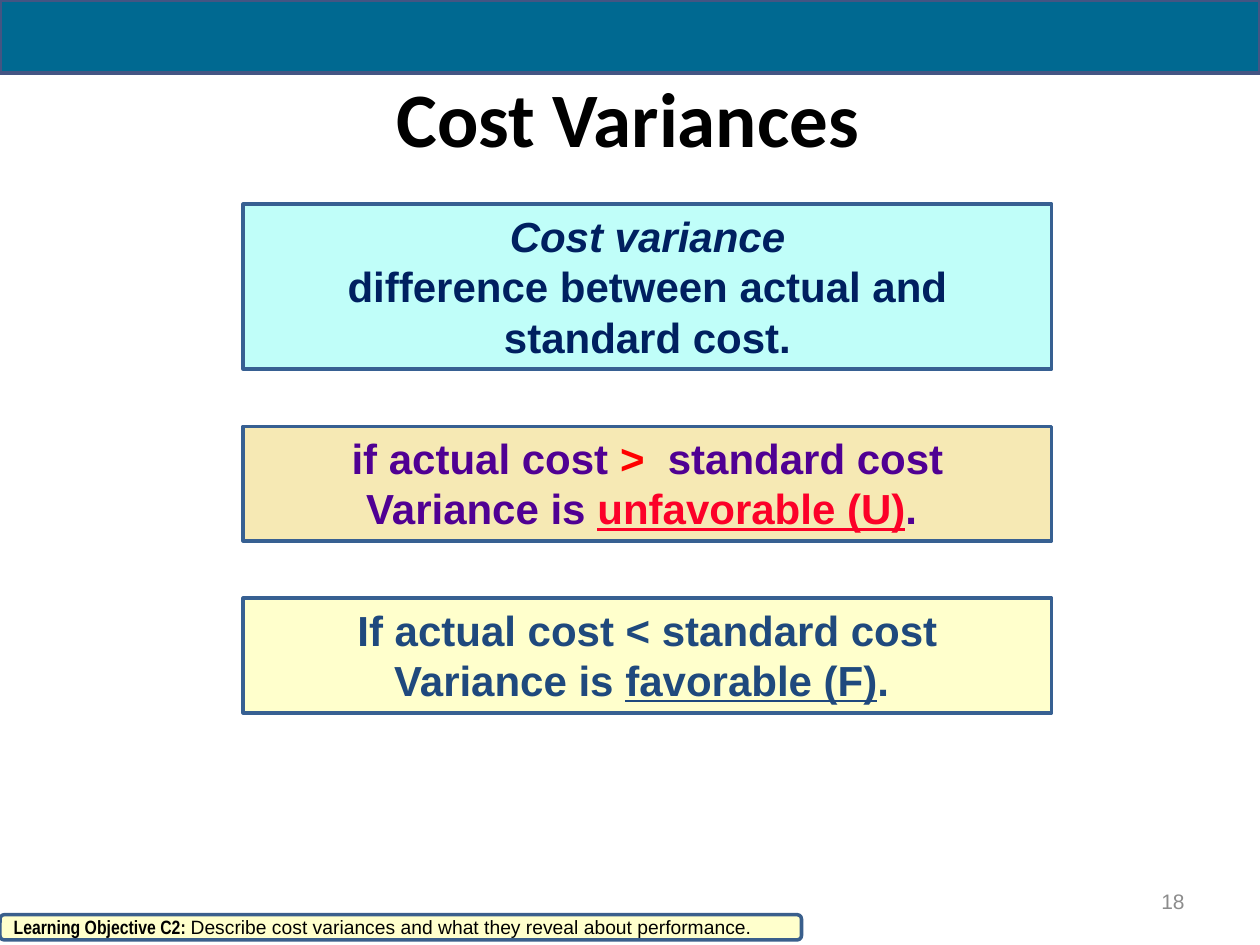
from dataclasses import dataclass

from pptx import Presentation
from pptx.dml.color import RGBColor
from pptx.enum.shapes import MSO_SHAPE
from pptx.enum.text import MSO_ANCHOR, PP_ALIGN
from pptx.util import Pt


@dataclass(frozen=True)
class Theme:
    banner: str = "006991"
    banner_line: str = "445583"
    box_line: str = "376092"
    footer_line: str = "3A5F8C"
    aqua: str = "C0FEF9"
    sand: str = "F6E9B4"
    cream: str = "FFFFCC"
    black: str = "000000"
    grey: str = "8C8C8C"
    navy: str = "002060"
    purple: str = "500093"
    blue: str = "1F497D"
    red: str = "FF0000"
    crimson: str = "FC0128"
    title_size: float = 44
    body_size: float = 24
    number_size: float = 12
    footer_size: float = 11


THEME = Theme()


def add_text(paragraph, text, *, size, color, font="Arial", bold=False, italic=False, underline=False):
    for index, line in enumerate(text.split("\n")):
        if index:
            paragraph.add_line_break()
        if line:
            run = paragraph.add_run()
            run.text = line
            run.font.name = font
            run.font.size = Pt(size)
            run.font.bold = bold
            run.font.italic = italic
            run.font.underline = underline
            run.font.color.rgb = RGBColor.from_string(color)


def prepare_paragraph(shape, alignment, anchor=MSO_ANCHOR.MIDDLE, vertical_margin=3.6):
    frame = shape.text_frame
    frame.word_wrap = True
    frame.vertical_anchor = anchor
    frame.margin_left = frame.margin_right = Pt(7.2)
    frame.margin_top = frame.margin_bottom = Pt(vertical_margin)
    paragraph = frame.paragraphs[0]
    paragraph.alignment = alignment
    return paragraph


def add_panel(slide, left, top, width, height, fill, line, line_width=2, kind=MSO_SHAPE.RECTANGLE):
    shape = slide.shapes.add_shape(kind, Pt(left), Pt(top), Pt(width), Pt(height))
    shape.shadow.inherit = False
    shape.fill.solid()
    shape.fill.fore_color.rgb = RGBColor.from_string(fill)
    shape.line.color.rgb = RGBColor.from_string(line)
    shape.line.width = Pt(line_width)
    return shape


def add_label(slide, left, top, width, height, text, alignment, **style):
    box = slide.shapes.add_textbox(Pt(left), Pt(top), Pt(width), Pt(height))
    add_text(prepare_paragraph(box, alignment), text, **style)


def add_variance_boxes(slide):
    boxes = [
        (94.3, THEME.aqua, THEME.navy, [
            ("Cost variance\n", {"italic": True}),
            ("difference between actual and standard cost.", {}),
        ]),
        (65.5, THEME.sand, THEME.purple, [
            ("if actual cost ", {}),
            ("> ", {"color": THEME.red}),
            (" standard cost\nVariance is ", {}),
            ("unfavorable (U)", {"color": THEME.crimson, "underline": True}),
            (". ", {}),
        ]),
        (65.5, THEME.cream, THEME.blue, [
            ("If actual cost < standard cost\nVariance is ", {}),
            ("favorable (F)", {"underline": True}),
            (". ", {}),
        ]),
    ]
    top, gap = 116.6, 32.7
    for height, fill, color, parts in boxes:
        shape = add_panel(slide, 139, top, 462, height, fill, THEME.box_line)
        paragraph = prepare_paragraph(shape, PP_ALIGN.CENTER, MSO_ANCHOR.TOP)
        for text, changes in parts:
            style = {"size": THEME.body_size, "color": color, "bold": True} | changes
            add_text(paragraph, text, **style)
        top += height + gap


def add_footer(slide):
    shape = add_panel(slide, 0, 522.7, 458, 14.4, THEME.cream, THEME.footer_line,
                      kind=MSO_SHAPE.ROUNDED_RECTANGLE)
    paragraph = prepare_paragraph(shape, PP_ALIGN.LEFT, vertical_margin=0)
    style = {"size": THEME.footer_size, "color": THEME.black}
    add_text(paragraph, "Learning Objective C2: ", font="Arial Narrow", bold=True, **style)
    add_text(paragraph, "Describe cost variances and what they reveal about performance.", **style)


def main():
    presentation = Presentation()
    presentation.slide_width = Pt(720)
    presentation.slide_height = Pt(540)
    slide = presentation.slides.add_slide(presentation.slide_layouts[6])
    add_panel(slide, 0, 0, 720, 41.8, THEME.banner, THEME.banner_line, 2.25)
    add_label(slide, 23, 21.6, 671.8, 90, "Cost Variances", PP_ALIGN.CENTER,
              size=THEME.title_size, color=THEME.black, font="Calibri", bold=True)
    add_variance_boxes(slide)
    add_label(slide, 516, 500.5, 168, 28.8, "18", PP_ALIGN.RIGHT,
              size=THEME.number_size, color=THEME.grey)
    add_footer(slide)
    presentation.save("out.pptx")


if __name__ == "__main__":
    main()
